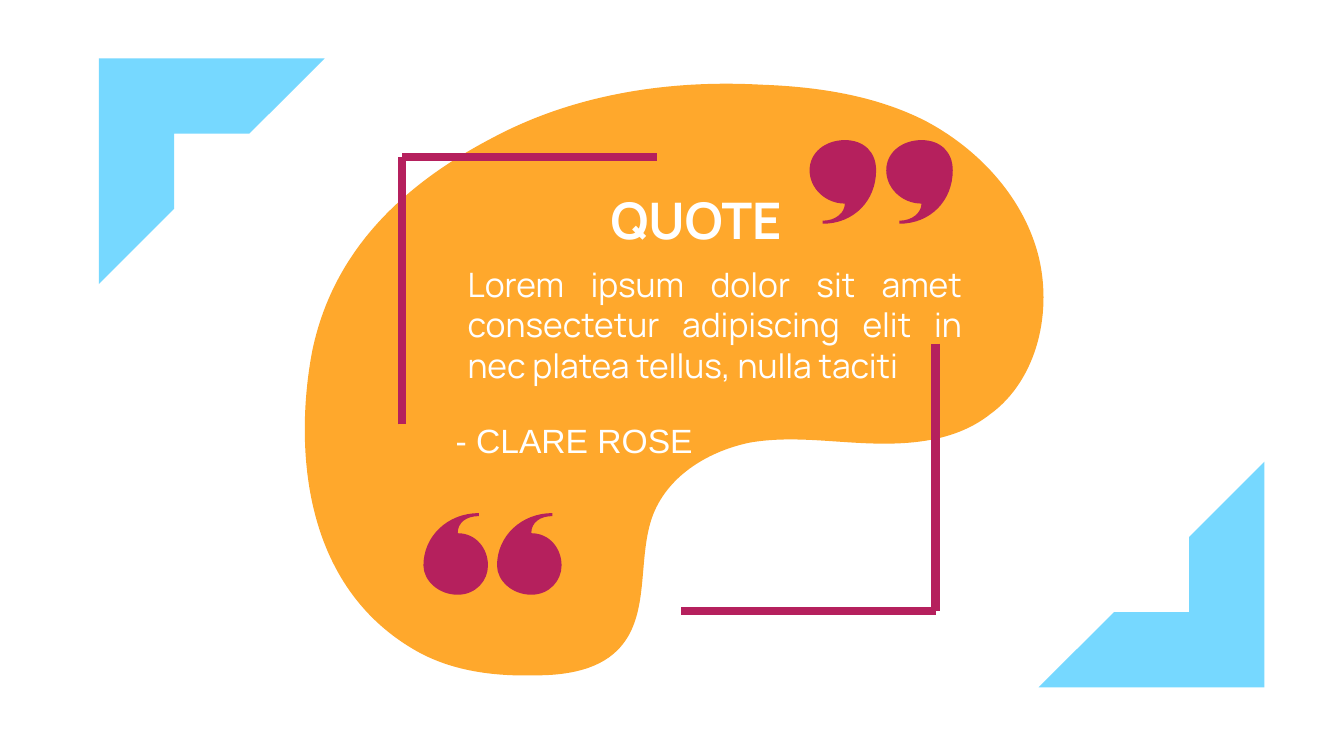
from lxml import etree
from pptx import Presentation
from pptx.dml.color import RGBColor
from pptx.enum.shapes import MSO_CONNECTOR, MSO_SHAPE
from pptx.enum.text import MSO_AUTO_SIZE, PP_ALIGN
from pptx.oxml.ns import qn
from pptx.util import Inches, Pt

STRAIGHT = MSO_CONNECTOR.STRAIGHT
HALF_FRAME = MSO_SHAPE.HALF_FRAME
GROW = MSO_AUTO_SIZE.SHAPE_TO_FIT_TEXT
CENTER, JUSTIFY = PP_ALIGN.CENTER, PP_ALIGN.JUSTIFY

THEME = {
    "blob": RGBColor(0xFF, 0xA8, 0x2C),
    "accent": RGBColor(0xB5, 0x20, 0x5D),
    "corner": RGBColor(0x76, 0xD8, 0xFF),
    "text": RGBColor(0xFF, 0xFF, 0xFF),
    "title_size": Pt(36),
    "body_size": Pt(24),
    "frame_width": Pt(6),
    "font": "Manrope",
    "author_font": "Arial",
}

prs = Presentation()
prs.slide_width, prs.slide_height = Inches(13.33), Inches(7.5)
s = prs.slides.add_slide(prs.slide_layouts[6])

# Positions count columns and rows of a fine grid over the whole slide
COL, ROW = prs.slide_width / 1333, prs.slide_height / 750


def grid(*cells):
    """Turn alternating column and row counts into slide lengths."""
    return [round(n * (ROW if i % 2 else COL)) for i, n in enumerate(cells)]


def add_curve(points, color, left=0, top=0):
    """Draw a closed chain of cubic curves: a start, then three points per curve."""
    builder = s.shapes.build_freeform(*points[0], scale=(COL, ROW))
    builder.add_line_segments(points[1:], close=True)
    sp = builder.convert_to_shape(*grid(left, top))
    outline = sp._element.spPr.find(".//" + qn("a:path"))
    segments = outline.findall(qn("a:lnTo"))
    for i in range(0, len(segments), 3):
        curve = etree.Element(qn("a:cubicBezTo"))
        segments[i].addprevious(curve)
        for segment in segments[i:i + 3]:
            curve.append(segment[0])
            outline.remove(segment)
    sp.fill.solid()
    sp.fill.fore_color.rgb = color
    sp.line.fill.background()
    sp.shadow.inherit = False


BLOB = [
    (1029, 250),
    (1013, 193), (969, 147), (918, 120),
    (869, 95), (812, 86), (755, 84),
    (665, 79), (571, 93), (490, 136),
    (407, 179), (332, 243), (310, 347),
    (296, 418), (288, 572), (410, 644),
    (447, 666), (490, 671), (531, 670),
    (561, 670), (597, 665), (617, 640),
    (645, 606), (632, 551), (648, 510),
    (664, 470), (705, 447), (744, 439),
    (785, 432), (826, 439), (867, 440),
    (906, 441), (949, 437), (982, 411),
    (1029, 377), (1045, 308), (1029, 250),
]
OPENING_MARK = [
    (34, 20),
    (34, 9), (43, 3), (55, 3),
    (55, 3), (55, 0), (55, 0),
    (24, 0), (0, 23), (0, 52),
    (0, 67), (15, 81), (34, 81),
    (52, 81), (64, 67), (64, 52),
    (64, 35), (52, 20), (34, 20),
]
CLOSING_MARK = [
    (35, 63),
    (35, 72), (26, 80), (13, 80),
    (13, 80), (13, 83), (13, 83),
    (44, 83), (66, 60), (66, 30),
    (66, 12), (54, 0), (35, 0),
    (16, 0), (0, 12), (0, 30),
    (0, 48), (16, 63), (35, 63),
]

add_curve(BLOB, THEME["blob"])

# Two open corners frame the quote
for ends in [(399, 421, 399, 156), (399, 156, 652, 156),
             (928, 341, 928, 606), (928, 606, 675, 606)]:
    frame = s.shapes.add_connector(STRAIGHT, *grid(*ends))
    frame.line.color.rgb = THEME["accent"]
    frame.line.width = THEME["frame_width"]
    etree.SubElement(frame._element.spPr, qn("a:effectLst"))

for mark, left, top, step in [(OPENING_MARK, 420, 509, 73),
                              (CLOSING_MARK, 803, 139, 76)]:
    for i in range(2):
        add_curve(mark, THEME["accent"], left + i * step, top)

quote = "Lorem ipsum dolor sit amet consectetur adipiscing elit in nec platea tellus, nulla taciti"
texts = [
    ("QUOTE", (554, 183, 273, 71), CENTER, "title_size", "font", True),
    (quote, (454, 257, 510, 131), JUSTIFY, "body_size", "font", False),
    ("- CLARE ROSE", (433, 412, 273, 50), CENTER, "body_size", "author_font", False),
]
for text, cells, align, size, font, bold in texts:
    tf = s.shapes.add_textbox(*grid(*cells)).text_frame
    tf.word_wrap = True
    tf.auto_size = GROW
    p = tf.paragraphs[0]
    p.alignment = align
    r = p.add_run()
    r.text = text
    r.font.size = THEME[size]
    r.font.name = THEME[font]
    r.font.bold = bold
    r.font.color.rgb = THEME["text"]

for left, top, rotation in [(98, 58, 0), (1030, 458, 180)]:
    sp = s.shapes.add_shape(HALF_FRAME, *grid(left, top, 224, 224))
    sp.rotation = rotation
    sp.fill.solid()
    sp.fill.fore_color.rgb = THEME["corner"]
    sp.line.fill.background()
    sp.shadow.inherit = False

prs.save("out.pptx")
